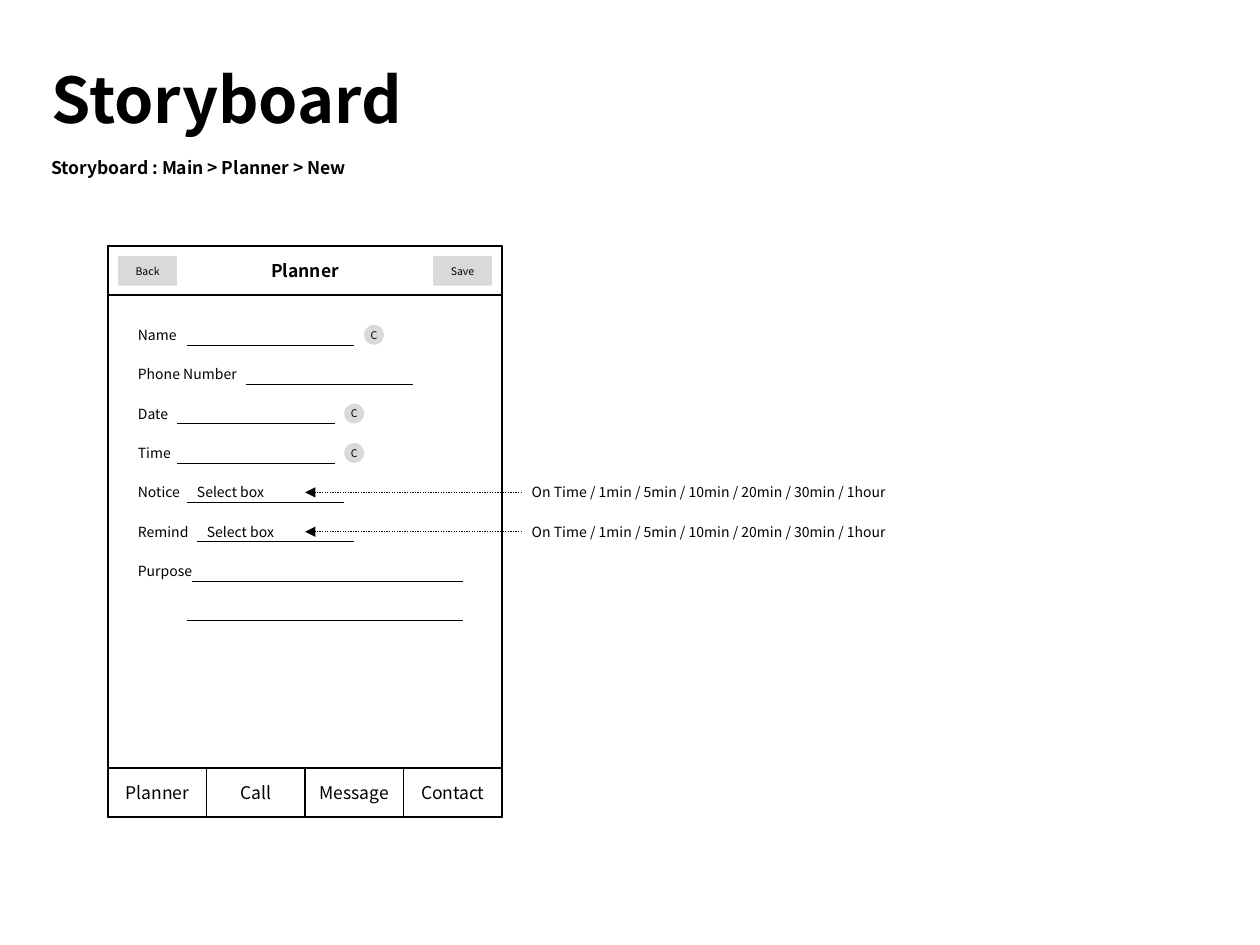
from pptx import Presentation
from pptx import util as u
from pptx.dml.color import RGBColor
from pptx.enum import dml, shapes, text
from pptx.oxml.ns import qn
from lxml import etree

THEME = dict(font="Noto Sans CJK KR", ink="000000", pale="D9D9D9",
             title=36, head=10, body=8, small=6, frame=1, rule=0.25, arrow=0.75)

TITLE = "Storyboard"
CRUMB = "Storyboard : Main > Planner > New"
HEAD = "Planner"
TABS = ["Planner", "Call", "Message", "Contact"]
BUTTONS = [("Back", 2.38), ("Save", 8.73)]
TIMES = "On Time / 1min / 5min / 10min / 20min / 30min / 1hour"
PICK = "Select box"

# label, label width, rule start, rule end, clear button x, select box x
FIELDS = [
    ("Name", 1.4, 3.76, 7.14, 7.34, None),
    ("Phone Number", 2.6, 4.96, 8.33, None, None),
    ("Date", 2.18, 3.57, 6.75, 6.94, None),
    ("Time", 2.18, 3.57, 6.75, 6.94, None),
    ("Notice", 2.18, 3.76, 6.94, None, 3.97),
    ("Remind", 2.18, 3.97, 7.14, None, 4.17),
    ("Purpose", 2.18, 3.87, 9.33, None, None),
    (None, 0, 3.76, 9.33, None, None),
]

LEFT, TOP, WIDE, HIGH, BAR = 2.18, 4.96, 7.94, 11.51, 0.99
ROW_X, ROW_Y, ROW_H, STEP = 2.78, 6.55, 0.4, WIDE / 10
NOTE_X, NOTE_W, ARROW = 10.72, 10.31, (10.52, 6.15)
RECT, OVAL = shapes.MSO_SHAPE.RECTANGLE, shapes.MSO_SHAPE.OVAL


def color(name):
    return RGBColor.from_string(THEME[name])


def write(shape, words, size, bold=False, center=False, tight=False):
    frame = shape.text_frame
    frame.text = words
    frame.word_wrap = True
    frame.auto_size = text.MSO_AUTO_SIZE.NONE
    frame.vertical_anchor = text.MSO_ANCHOR.MIDDLE
    if tight:
        frame.margin_left = frame.margin_right = 0
        frame.margin_top = frame.margin_bottom = 0
    para = frame.paragraphs[0]
    para.alignment = text.PP_ALIGN.CENTER if center else text.PP_ALIGN.LEFT
    para.font.name = THEME["font"]
    para.font.size = u.Pt(THEME[size])
    para.font.bold = bold
    para.font.color.rgb = color("ink")


def label(slide, words, x, y, w, h, size="body", bold=False, tight=True):
    box = slide.shapes.add_textbox(*map(u.Cm, (x, y, w, h)))
    write(box, words, size, bold, tight=tight)


def block(slide, kind, x, y, w, h, filled=False):
    shape = slide.shapes.add_shape(kind, *map(u.Cm, (x, y, w, h)))
    shape.shadow.inherit = False
    if filled:
        shape.fill.solid()
        shape.fill.fore_color.rgb = color("pale")
        shape.line.fill.background()
    else:
        shape.fill.background()
        shape.line.color.rgb = color("ink")
        shape.line.width = u.Pt(THEME["frame"])
    return shape


def rule(slide, start, end, y, width="rule", arrow=False):
    line = slide.shapes.add_connector(
        shapes.MSO_CONNECTOR.STRAIGHT, *map(u.Cm, (start, y, end, y)))
    line.line.color.rgb = color("ink")
    line.line.width = u.Pt(THEME[width])
    props = line._element.spPr
    if arrow:
        line.line.dash_style = dml.MSO_LINE.ROUND_DOT
        etree.SubElement(props.find(qn("a:ln")), qn("a:tailEnd"), type="triangle")
    etree.SubElement(props, qn("a:effectLst"))


def header(slide):
    title = slide.shapes.title
    title.left, title.top, title.width, title.height = map(
        u.Cm, (0.79, 0.79, 18.47, 2.38))
    write(title, TITLE, "title", bold=True)
    label(slide, CRUMB, 0.79, 2.98, 18.47, 0.79, "head", bold=True, tight=False)


def phone(slide):
    block(slide, RECT, LEFT, TOP, WIDE, HIGH)
    write(block(slide, RECT, LEFT, TOP, WIDE, BAR), HEAD, "head", True, True)
    for words, x in BUTTONS:
        shape = block(slide, RECT, x, TOP + 0.2, 1.19, 0.6, True)
        write(shape, words, "small", center=True)
    wide = WIDE / len(TABS)
    for i, words in enumerate(TABS):
        tab = block(slide, RECT, LEFT + i * wide, TOP + HIGH - BAR, wide, BAR)
        write(tab, words, "head", center=True)


def form(slide):
    for i, (name, wide, start, end, clear, pick) in enumerate(FIELDS):
        y = ROW_Y + i * STEP
        if name:
            label(slide, name, ROW_X, y, wide, ROW_H)
        rule(slide, start, end, y + ROW_H)
        if clear:
            dot = block(slide, OVAL, clear, y, ROW_H, ROW_H, True)
            write(dot, "C", "small", center=True, tight=True)
        if pick:
            label(slide, PICK, pick, y, 2.18, ROW_H)
            rule(slide, *ARROW, y + ROW_H / 2, "arrow", True)
            label(slide, TIMES, NOTE_X, y, NOTE_W, ROW_H)


def main():
    deck = Presentation()
    deck.slide_width, deck.slide_height = u.Cm(25.4), u.Cm(19.05)
    slide = deck.slides.add_slide(deck.slide_layouts.get_by_name("Title Only"))
    header(slide)
    phone(slide)
    form(slide)
    deck.save("out.pptx")


if __name__ == "__main__":
    main()
